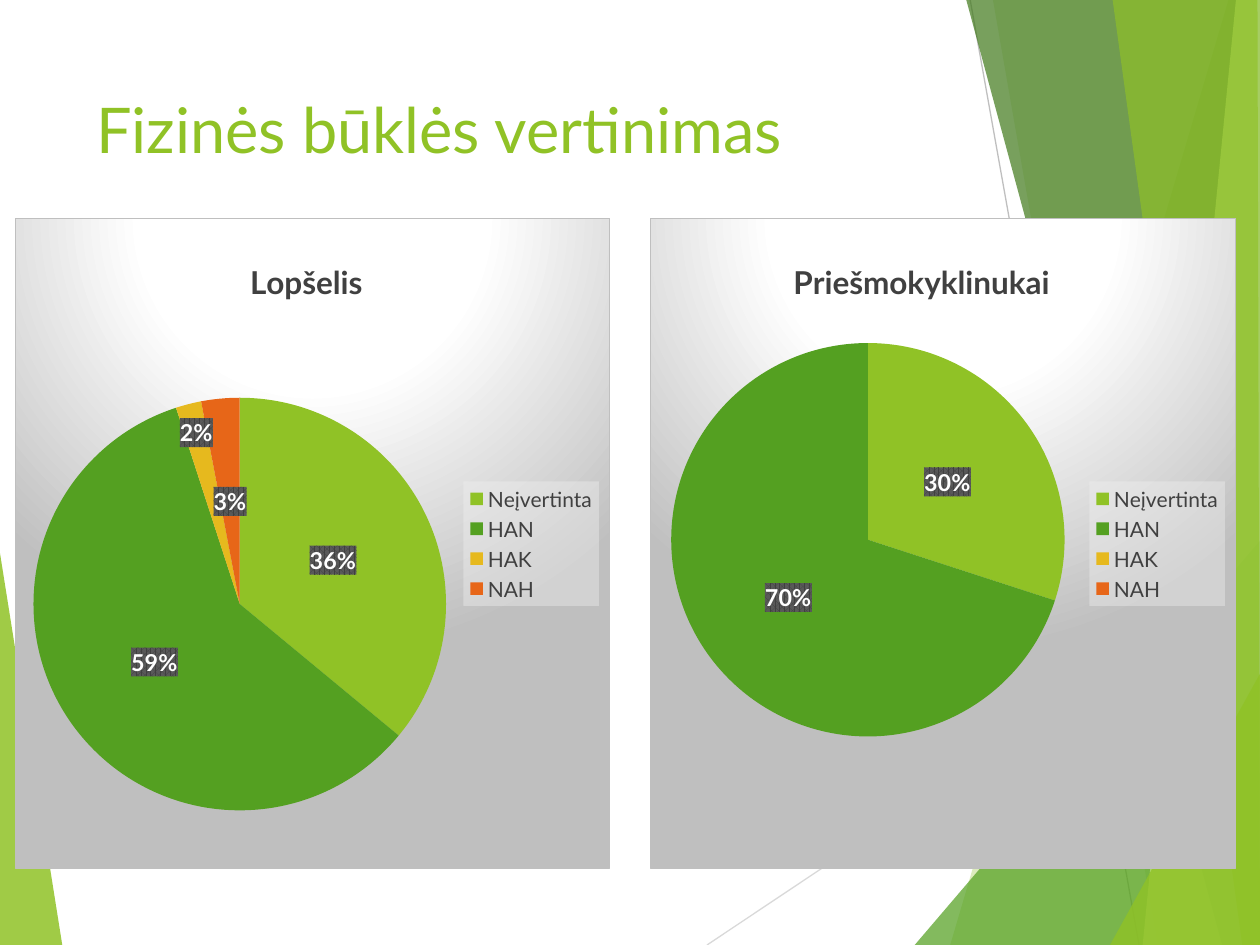
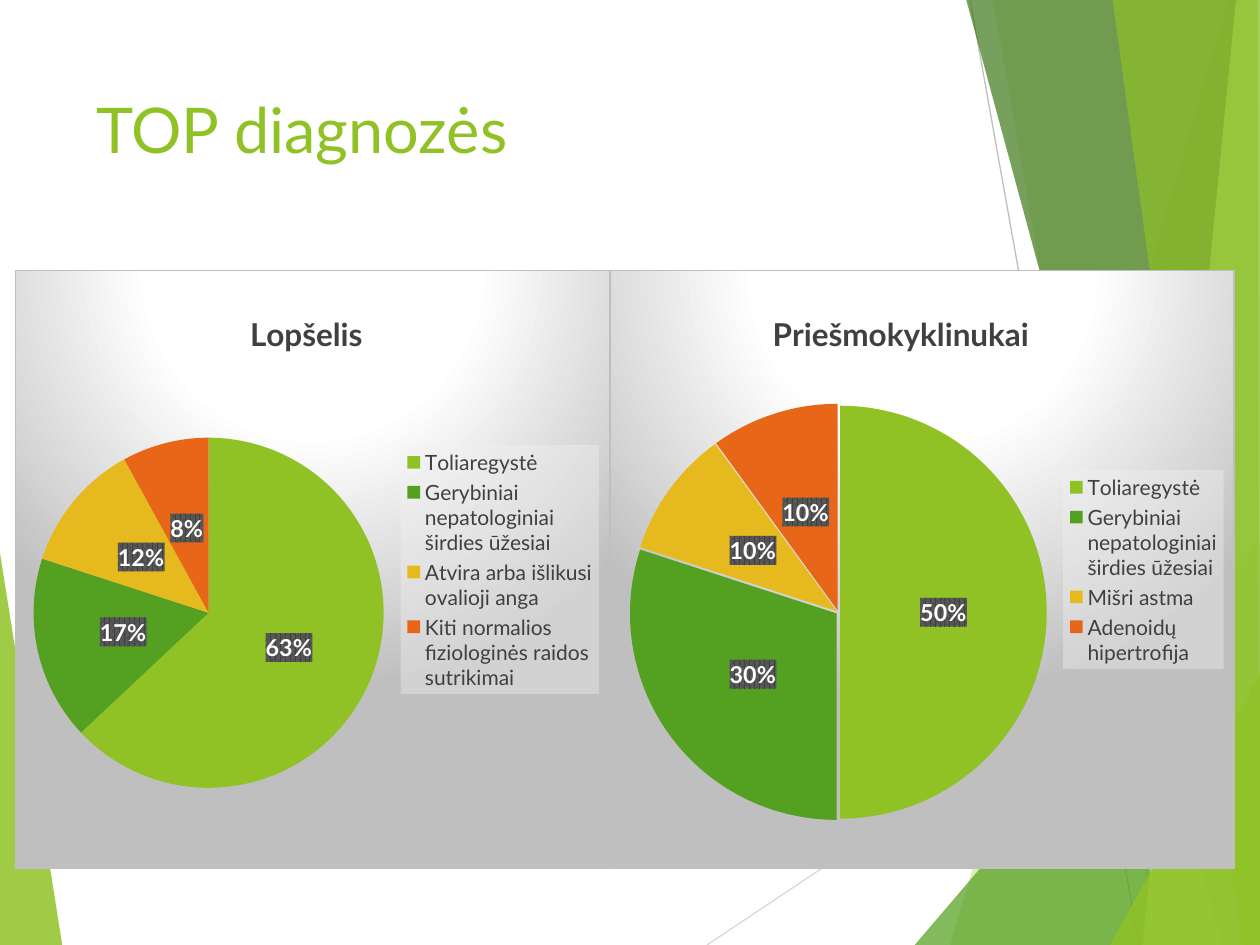
"""Build two slides of pie charts on child health over a green faceted backdrop."""
from copy import deepcopy
from dataclasses import dataclass

from pptx import Presentation
from pptx.chart.chart import Chart
from pptx.chart.data import CategoryChartData
from pptx.dml.color import RGBColor
from pptx.enum.chart import XL_CHART_TYPE, XL_LABEL_POSITION, XL_LEGEND_POSITION
from pptx.enum.shapes import MSO_CONNECTOR
from pptx.oxml import parse_xml
from pptx.oxml.ns import nsdecls, qn
from pptx.slide import Slide
from pptx.util import Pt

WIDTH, HEIGHT = 720, 540
FONT = "Lato"
CHART_BOTTOM = 496.8
CHART_TITLE_TOP = 20
COLORS = {
    "lime": "90C226",
    "green": "54A021",
    "gold": "E6B91E",
    "orange": "E76618",
    "forest": "3F7819",
    "pale_lime": "C0E474",
    "white": "FFFFFF",
    "mist": "F2F2F2",
    "light_gray": "D9D9D9",
    "gray": "BFBFBF",
    "dim": "595959",
    "dark": "404040",
    "black": "000000",
}
SLICE_COLORS = ("lime", "green", "gold", "orange")


@dataclass(frozen=True)
class Facet:
    color: str
    opacity: int
    corners: tuple[tuple[float, float], ...]


@dataclass(frozen=True)
class Ray:
    color: str
    start: tuple[float, float]
    end: tuple[float, float]


@dataclass(frozen=True)
class Pie:
    title: str
    title_width: float
    left: float
    width: float
    plot: tuple[float, float, float, float]
    shares: dict[str, int]
    explosion: int = 0
    moved_label: tuple[int, float, float] | None = None


@dataclass(frozen=True)
class Page:
    title: str
    chart_top: float
    pies: tuple[Pie, ...]


LEFT_FACET = Facet("lime", 85, ((0, 316), (35.6, HEIGHT), (0, HEIGHT)))
RAYS = (
    Ray("light_gray", (404, HEIGHT), (WIDTH, 329)),
    Ray("gray", (554.4, 0), (650.9, HEIGHT)),
)
RIGHT_FACETS = (
    Facet("lime", 30, ((702, 0), (543, HEIGHT), (WIDTH, HEIGHT), (WIDTH, 0))),
    Facet("lime", 20, ((567.4, 0), (661.7, HEIGHT), (WIDTH, HEIGHT), (WIDTH, 0))),
    Facet("green", 72, ((522.7, HEIGHT), (WIDTH, 309), (WIDTH, HEIGHT))),
    Facet("forest", 70, ((552.2, 0), (698.4, HEIGHT), (WIDTH, HEIGHT), (WIDTH, 0))),
    Facet("pale_lime", 70, ((706.3, 0), (653, HEIGHT), (WIDTH, HEIGHT), (WIDTH, 0))),
    Facet("lime", 65, ((635.8, 0), (709.9, HEIGHT), (WIDTH, HEIGHT), (718.6, 0))),
    Facet("lime", 80, ((634.3, HEIGHT), (WIDTH, 385), (WIDTH, HEIGHT))),
)

PAGES = (
    Page("Fizinės būklės vertinimas", 124.6, (
        Pie("Lopšelis", 78, 8.6, 340, (0.03, 0.275, 0.695, 0.636),
            {"Neįvertinta": 36, "HAN": 59, "HAK": 2, "NAH": 3},
            moved_label=(2, -0.03, -0.11)),
        Pie("Priešmokyklinukai", 178, 371.5, 334.8, (0.035, 0.166, 0.673, 0.656),
            {"Neįvertinta": 30, "HAN": 70, "HAK": 0, "NAH": 0}),
    )),
    Page("TOP diagnozės", 154.1, (
        Pie("Lopšelis", 78, 8.6, 340, (0.03, 0.28, 0.59, 0.585),
            {"Toliaregystė": 63,
             "Gerybiniai nepatologiniai širdies ūžesiai": 17,
             "Atvira arba išlikusi ovalioji anga": 12,
             "Kiti normalios fiziologinės raidos sutrikimai": 8}),
        Pie("Priešmokyklinukai", 178, 348.6, 357, (0.03, 0.223, 0.67, 0.697),
            {"Toliaregystė": 50,
             "Gerybiniai nepatologiniai širdies ūžesiai": 30,
             "Mišri astma": 10,
             "Adenoidų hipertrofija": 10},
            explosion=1),
    )),
)


def rgb(color: str) -> RGBColor:
    return RGBColor.from_string(COLORS[color])


def color_xml(color: str, opacity: int = 100) -> str:
    return f'<a:srgbClr val="{COLORS[color]}"><a:alpha val="{opacity * 1000}"/></a:srgbClr>'


def chart_xml(tag: str, content: str = "", attributes: str = ""):
    return parse_xml(f'<c:{tag} {nsdecls("c", "a")} {attributes}>{content}</c:{tag}>')


def format_font(font, *, size: float, color: str, bold: bool = False) -> None:
    font.name = FONT
    font.size = Pt(size)
    font.bold = bold
    font.color.rgb = rgb(color)


def add_text(slide: Slide, text: str, *, left: float, top: float, width: float,
             height: float, size: float, color: str) -> None:
    frame = slide.shapes.add_textbox(Pt(left), Pt(top), Pt(width), Pt(height)).text_frame
    frame.word_wrap = True
    run = frame.paragraphs[0].add_run()
    run.text = text
    format_font(run.font, size=size, color=color)


def draw_facet(slide: Slide, facet: Facet) -> None:
    corners = [(Pt(x), Pt(y)) for x, y in facet.corners]
    builder = slide.shapes.build_freeform(*corners[0], scale=1.0)
    builder.add_line_segments(corners[1:], close=True)
    pane = builder.convert_to_shape()
    pane.shadow.inherit = False
    pane.fill.solid()
    pane.fill.fore_color.rgb = rgb(facet.color)
    pane.line.fill.background()
    tint = pane.fill._xPr.find(qn("a:solidFill")).find(qn("a:srgbClr"))
    tint.append(parse_xml(f'<a:alpha {nsdecls("a")} val="{facet.opacity * 1000}"/>'))


def draw_ray(slide: Slide, ray: Ray) -> None:
    x1, y1, x2, y2 = (Pt(value) for value in ray.start + ray.end)
    line = slide.shapes.add_connector(MSO_CONNECTOR.STRAIGHT, x1, y1, x2, y2)
    line.line.color.rgb = rgb(ray.color)
    line.line.width = Pt(0.75)
    line._element.spPr.append(parse_xml(f'<a:effectLst {nsdecls("a")}/>'))


def draw_backdrop(slide: Slide) -> None:
    draw_facet(slide, LEFT_FACET)
    for ray in RAYS:
        draw_ray(slide, ray)
    for facet in RIGHT_FACETS:
        draw_facet(slide, facet)


def set_background(part, content: str) -> None:
    part.find(qn("c:txPr")).addprevious(chart_xml("spPr", content))


def set_layout(part, index: int, *, edge: bool = True, inner: bool = False,
               **fractions: float) -> None:
    for previous in part.findall(qn("c:layout")):
        part.remove(previous)
    content = '<c:layoutTarget val="inner"/>' if inner else ""
    if edge:
        content += '<c:xMode val="edge"/><c:yMode val="edge"/>'
    content += "".join(f'<c:{key} val="{value:.4f}"/>' for key, value in fractions.items())
    part.insert(index, chart_xml("layout", f"<c:manualLayout>{content}</c:manualLayout>"))


def format_title(chart: Chart, pie: Pie, height: float) -> None:
    chart.has_title = True
    heading = chart.chart_title
    run = heading.text_frame.paragraphs[0].add_run()
    run.text = pie.title
    format_font(run.font, size=18, color="dark", bold=True)
    set_layout(heading._element, 1, x=0.5 - pie.title_width / 2 / pie.width,
               y=CHART_TITLE_TOP / height)


def format_legend(chart: Chart) -> None:
    chart.has_legend = True
    legend = chart.legend
    legend.position = XL_LEGEND_POSITION.RIGHT
    legend.include_in_layout = False
    format_font(legend.font, size=12, color="dark")
    set_background(legend._element, f'<a:solidFill>{color_xml("mist", 39)}</a:solidFill>')


def format_labels(chart: Chart, pie: Pie) -> None:
    labels = chart.plots[0].series[0].data_labels
    labels.show_percentage = True
    labels.show_value = False
    labels.number_format = "0%"
    labels.number_format_is_linked = False
    labels.position = XL_LABEL_POSITION.CENTER
    format_font(labels.font, size=13.3, color="white", bold=True)
    element = labels._element
    set_background(element, f'<a:pattFill prst="pct75"><a:fgClr>{color_xml("dark")}</a:fgClr>'
                            f'<a:bgClr>{color_xml("dim")}</a:bgClr></a:pattFill>')
    shared = [deepcopy(child) for child in element if child.tag != qn("c:showLeaderLines")]
    exceptions = []
    if pie.moved_label:
        index, dx, dy = pie.moved_label
        moved = chart_xml("dLbl", f'<c:idx val="{index}"/>')
        set_layout(moved, 1, edge=False, x=dx, y=dy)
        moved.extend(shared)
        exceptions.append(moved)
    for index, share in enumerate(pie.shares.values()):
        if share == 0:
            exceptions.append(
                chart_xml("dLbl", f'<c:idx val="{index}"/><c:delete val="1"/>'))
    for position, exception in enumerate(exceptions):
        element.insert(position, exception)


def format_slices(chart: Chart, pie: Pie) -> None:
    plot = chart.plots[0]
    plot.vary_by_categories = True
    series = plot.series[0]
    for index, color in enumerate(SLICE_COLORS):
        style = series.points[index].format
        style.fill.solid()
        style.fill.fore_color.rgb = rgb(color)
        style.line.fill.background()
    if pie.explosion:
        series._element.find(qn("c:tx")).addnext(
            chart_xml("explosion", attributes=f'val="{pie.explosion}"'))


def format_panel(chart: Chart, pie: Pie) -> None:
    stops = "".join(f'<a:gs pos="{position * 1000}">{color_xml(color)}</a:gs>'
                    for position, color in ((0, "white"), (39, "white"), (100, "gray")))
    set_background(chart._chartSpace, (
        f'<a:gradFill><a:gsLst>{stops}</a:gsLst><a:path path="circle">'
        '<a:fillToRect l="50000" t="-80000" r="50000" b="180000"/></a:path></a:gradFill>'
        f'<a:ln w="{Pt(0.75)}"><a:solidFill>{color_xml("gray")}</a:solidFill></a:ln>'))
    x, y, w, h = pie.plot
    area = chart._chartSpace.chart.plotArea
    set_layout(area, 0, inner=True, x=x, y=y, w=w, h=h)


def draw_pie(slide: Slide, pie: Pie, top: float) -> None:
    height = CHART_BOTTOM - top
    data = CategoryChartData()
    data.categories = list(pie.shares)
    data.add_series("Series 1", list(pie.shares.values()))
    chart = slide.shapes.add_chart(XL_CHART_TYPE.PIE, Pt(pie.left), Pt(top),
                                   Pt(pie.width), Pt(height), data).chart
    format_font(chart.font, size=10, color="black")
    format_title(chart, pie, height)
    format_legend(chart)
    format_slices(chart, pie)
    format_labels(chart, pie)
    format_panel(chart, pie)


def main() -> None:
    deck = Presentation()
    deck.slide_width, deck.slide_height = Pt(WIDTH), Pt(HEIGHT)
    for page in PAGES:
        slide = deck.slides.add_slide(deck.slide_layouts[6])
        draw_backdrop(slide)
        add_text(slide, page.title, left=48, top=48, width=500, height=104,
                 size=36, color="lime")
        for pie in page.pies:
            draw_pie(slide, pie, page.chart_top)
    deck.save("out.pptx")


if __name__ == "__main__":
    main()
